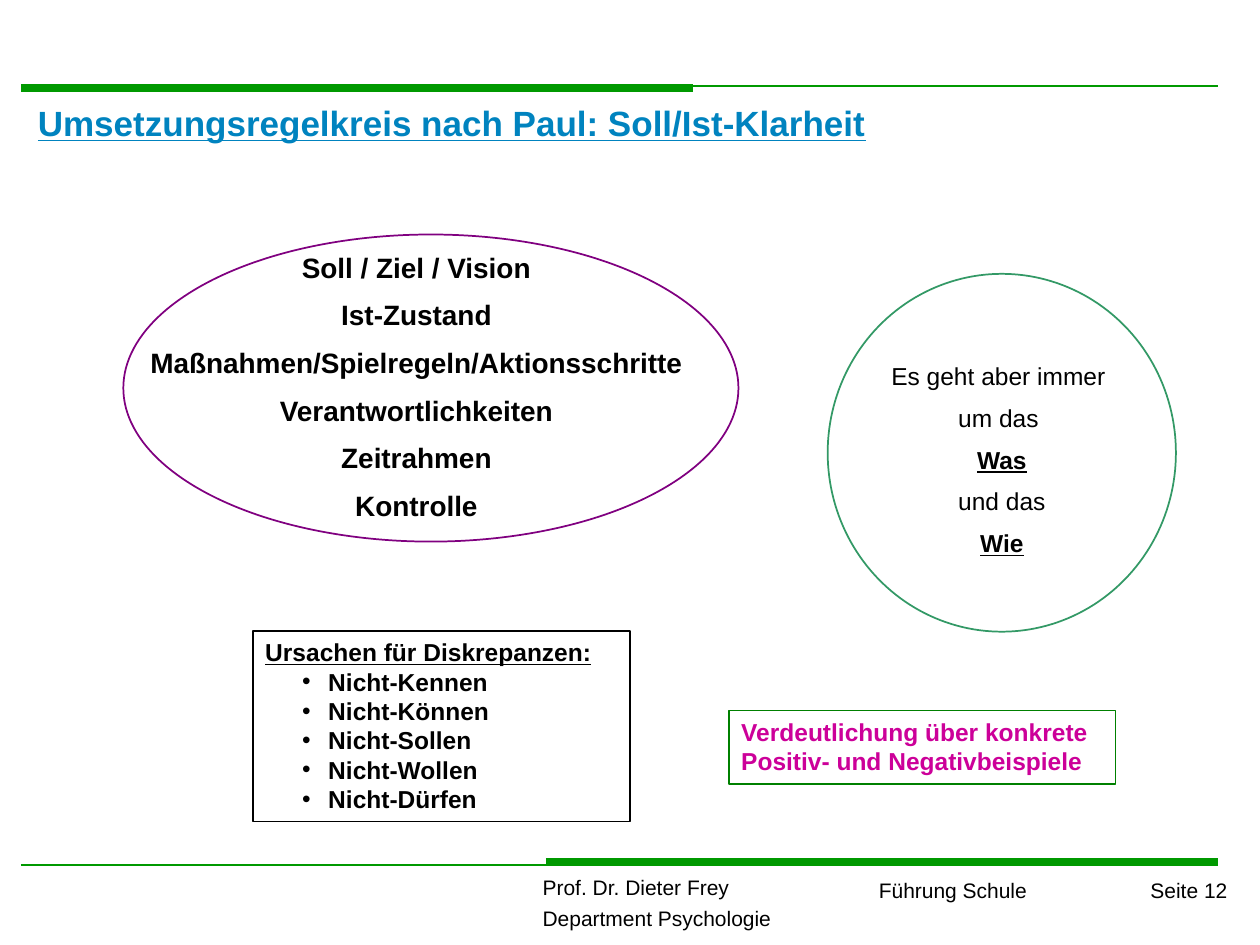
from dataclasses import dataclass

from lxml.etree import SubElement
from pptx import Presentation
from pptx.dml.color import RGBColor
from pptx.enum.shapes import MSO_CONNECTOR, MSO_SHAPE
from pptx.enum.text import MSO_ANCHOR, PP_ALIGN
from pptx.oxml.ns import qn
from pptx.util import Pt


@dataclass(frozen=True)
class Theme:
    font: str = "Arial"
    text: str = "000000"
    title: str = "0083BF"
    rule: str = "009900"
    cycle: str = "800080"
    reminder: str = "339966"
    example_border: str = "008000"
    example_text: str = "CC0099"
    title_size: int = 20
    cycle_size: int = 16
    body_size: int = 14
    footer_size: int = 12


THEME = Theme()


def add_rule(slide, left, right, y, weight):
    rule = slide.shapes.add_connector(
        MSO_CONNECTOR.STRAIGHT, Pt(left), Pt(y), Pt(right), Pt(y))
    rule.line.color.rgb = RGBColor.from_string(THEME.rule)
    rule.line.width = Pt(weight)
    SubElement(rule._element.spPr, qn("a:effectLst"))


def add_outline(slide, preset, box, color):
    outline = slide.shapes.add_shape(preset, *map(Pt, box))
    outline.shadow.inherit = False
    outline.fill.background()
    outline.line.color.rgb = RGBColor.from_string(color)
    outline.line.width = Pt(1)
    return outline


def write_lines(holder, lines, size, color=THEME.text, align=PP_ALIGN.LEFT,
                bold=False, underlined=(), gap=0, spacing=None):
    frame = holder.text_frame
    frame.word_wrap = True
    frame.vertical_anchor = MSO_ANCHOR.TOP
    frame.text = "\n".join(lines)
    for index, paragraph in enumerate(frame.paragraphs):
        paragraph.alignment = align
        if spacing:
            paragraph.line_spacing = spacing
        if index and gap:
            paragraph.space_before = Pt(gap)
        for run in paragraph.runs:
            run.font.name = THEME.font
            run.font.size = Pt(size)
            run.font.color.rgb = RGBColor.from_string(color)
            run.font.bold = bold or run.text in underlined
            run.font.underline = run.text in underlined
    return frame


def add_text(slide, box, lines, size, **style):
    return write_lines(slide.shapes.add_textbox(*map(Pt, box)), lines, size, **style)


def add_bullet(paragraph):
    properties = paragraph._p.get_or_add_pPr()
    properties.set("marL", str(Pt(36)))
    properties.set("indent", str(Pt(-15)))
    SubElement(properties, qn("a:buFont"), typeface=THEME.font)
    SubElement(properties, qn("a:buChar"), char="•")


def add_frame_and_footer(slide):
    for left, right, y, weight in [(276, 696, 49, 1), (12, 396, 50.5, 4.5),
                                   (12, 444, 494.5, 1), (312, 696, 492.5, 4.5)]:
        add_rule(slide, left, right, y, weight)
    size = THEME.footer_size
    add_text(slide, (433.5, 500.5, 160.5, 19), ["Führung Schule"], size,
             align=PP_ALIGN.RIGHT, spacing=0.8)
    add_text(slide, (303, 499, 260.5, 37.5),
             ["Prof. Dr. Dieter Frey", "Department Psychologie"], size,
             gap=size / 2, spacing=0.8)
    add_text(slide, (570, 502, 138.5, 17.5), ["Seite 12"], size,
             align=PP_ALIGN.RIGHT, spacing=0.7)


def add_cycle(slide):
    add_text(slide, (70.5, 139.5, 335, 171),
             ["Soll / Ziel / Vision", "Ist-Zustand",
              "Maßnahmen/Spielregeln/Aktionsschritte",
              "Verantwortlichkeiten", "Zeitrahmen", "Kontrolle"],
             THEME.cycle_size, align=PP_ALIGN.CENTER, bold=True,
             gap=THEME.cycle_size / 2)
    add_outline(slide, MSO_SHAPE.OVAL, (70.5, 134, 351.5, 175.5), THEME.cycle)


def add_reminder(slide):
    add_text(slide, (484.5, 203, 176, 151),
             ["Es geht aber immer ", "um das ", "Was", "und das", "Wie"],
             THEME.body_size, align=PP_ALIGN.CENTER, underlined=("Was", "Wie"),
             gap=THEME.body_size / 2)
    add_outline(slide, MSO_SHAPE.OVAL, (473, 156.5, 199, 204.5), THEME.reminder)


def add_causes(slide):
    heading = "Ursachen für Diskrepanzen:"
    causes = [f"Nicht-{verb}" for verb in ("Kennen", "Können", "Sollen", "Wollen", "Dürfen")]
    panel = add_outline(slide, MSO_SHAPE.RECTANGLE, (144.5, 360.5, 215.5, 109), THEME.text)
    frame = write_lines(panel, [heading, *causes], THEME.body_size,
                        bold=True, underlined=(heading,))
    for paragraph in frame.paragraphs[1:]:
        add_bullet(paragraph)


def add_examples(slide):
    panel = add_outline(slide, MSO_SHAPE.RECTANGLE, (416.5, 406, 221, 42),
                        THEME.example_border)
    write_lines(panel, ["Verdeutlichung über konkrete Positiv- und Negativbeispiele"],
                THEME.body_size, color=THEME.example_text, bold=True)


def main():
    deck = Presentation()
    deck.slide_width, deck.slide_height = Pt(720), Pt(540)
    slide = deck.slides.add_slide(deck.slide_layouts[6])
    add_frame_and_footer(slide)
    title = "Umsetzungsregelkreis nach Paul: Soll/Ist-Klarheit"
    add_text(slide, (14.5, 54.5, 612, 39.5), [title], THEME.title_size,
             color=THEME.title, bold=True, underlined=(title,))
    add_cycle(slide)
    add_reminder(slide)
    add_causes(slide)
    add_examples(slide)
    deck.save("out.pptx")


if __name__ == "__main__":
    main()
